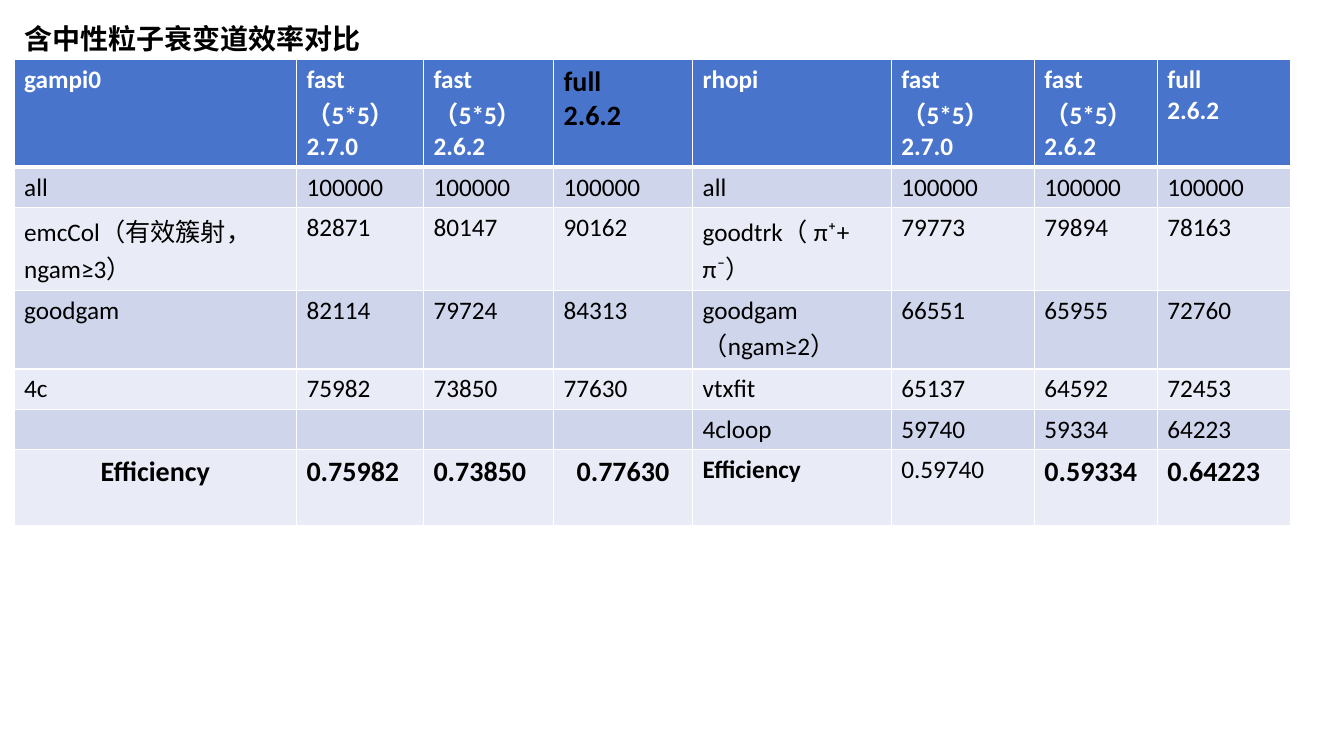
import pptx
import pptx.dml.color
import pptx.enum.text
import pptx.oxml
import pptx.oxml.ns
import pptx.util

Inches = pptx.util.Inches
RGBColor = pptx.dml.color.RGBColor
PP_ALIGN = pptx.enum.text.PP_ALIGN

WHITE = RGBColor(0xFF, 0xFF, 0xFF)
BLACK = RGBColor(0x00, 0x00, 0x00)
HEADER_BLUE = RGBColor(0x48, 0x74, 0xCB)
BAND_DARK = RGBColor(0xCF, 0xD6, 0xEC)
BAND_LIGHT = RGBColor(0xE9, 0xEB, 0xF6)

TITLE = "含中性粒子衰变道效率对比"
COL_WIDTHS = [2.8, 1.26, 1.29, 1.38, 1.97, 1.42, 1.22, 1.32]
ROW_HEIGHTS = [1.07, 0.4, 0.82, 0.78, 0.4, 0.4, 0.75]
FAST_270 = "fast（5*5）\n2.7.0"
FAST_262 = "fast（5*5）\n2.6.2"
FULL_262 = "full\n2.6.2"
ROWS = [
    ["gampi0", FAST_270, FAST_262, FULL_262, "rhopi", FAST_270, FAST_262, FULL_262],
    ["all", "100000", "100000", "100000", "all", "100000", "100000", "100000"],
    ["emcCol（有效簇射，ngam≥3）", "82871", "80147", "90162",
     "goodtrk（ π⁺+ π⁻）", "79773", "79894", "78163"],
    ["goodgam", "82114", "79724", "84313", "goodgam（ngam≥2）", "66551", "65955", "72760"],
    ["4c", "75982", "73850", "77630", "vtxfit", "65137", "64592", "72453"],
    ["", "", "", "", "4cloop", "59740", "59334", "64223"],
    ["Efficiency", "0.75982", "0.73850", "0.77630",
     "Efficiency", "0.59740", "0.59334", "0.64223"],
]
HEADER = {"size": 18, "bold": True, "color": WHITE}
BODY = {"size": 18, "bold": False, "color": BLACK}
RESULT = {"size": 20, "bold": True, "color": BLACK}
EXCEPTIONS = {
    (0, 3): {"size": 20, "color": BLACK},
    (6, 0): {"align": PP_ALIGN.CENTER},
    (6, 3): {"align": PP_ALIGN.CENTER},
    (6, 4): {"size": 18},
    (6, 5): {"size": 18, "bold": False},
}


def set_text(tf, text, fmt):
    """Fill a text frame, one paragraph a line, in the given format."""
    tf.text = text
    for p in tf.paragraphs:
        p.alignment = fmt.get("align", PP_ALIGN.LEFT)
        for r in p.runs:
            font = {"name": "Calibri", "size": pptx.util.Pt(fmt["size"]), "bold": fmt["bold"]}
            for name, value in font.items():
                setattr(r.font, name, value)
            r.font.color.rgb = fmt["color"]


def set_borders(cell, bottom):
    """Draw white cell borders with the given bottom width in points."""
    tcPr = cell._tc.get_or_add_tcPr()
    for side, width in {"L": 1, "R": 1, "T": 1, "B": bottom}.items():
        tcPr.append(pptx.oxml.parse_xml(
            f'<a:ln{side} {pptx.oxml.ns.nsdecls("a")} w="{pptx.util.Pt(width)}">'
            f'<a:solidFill><a:srgbClr val="{WHITE}"/></a:solidFill></a:ln{side}>'))


def add_title(s, left, top, width, height):
    """Place the slide title in the given box."""
    sp = s.shapes.title
    box = {"left": left, "top": top, "width": width, "height": height}
    for name, value in box.items():
        setattr(sp, name, Inches(value))
    set_text(sp.text_frame, TITLE, RESULT)
    sp.text_frame.auto_size = pptx.enum.text.MSO_AUTO_SIZE.SHAPE_TO_FIT_TEXT


def add_efficiency_table(s, left, top, width, height):
    """Place the table of event counts and efficiencies in the given box."""
    table = s.shapes.add_table(len(ROWS), len(COL_WIDTHS), Inches(left), Inches(top),
                               Inches(width), Inches(height)).table
    table.horz_banding = False
    for col, col_width in zip(table.columns, COL_WIDTHS):
        col.width = Inches(col_width)
    for i, values in enumerate(ROWS):
        table.rows[i].height = Inches(ROW_HEIGHTS[i])
        base = {0: HEADER, len(ROWS) - 1: RESULT}.get(i, BODY)
        fill = HEADER_BLUE if i == 0 else BAND_DARK if i % 2 else BAND_LIGHT
        for j, text in enumerate(values):
            cell = table.cell(i, j)
            set_borders(cell, 3 if i == 0 else 1)
            cell.fill.solid()
            cell.fill.fore_color.rgb = fill
            set_text(cell.text_frame, text, {**base, **EXCEPTIONS.get((i, j), {})})


def main():
    """Build the slide and save it."""
    prs = pptx.Presentation()
    prs.slide_width, prs.slide_height = Inches(13.33), Inches(7.5)
    s = prs.slides.add_slide(prs.slide_layouts[5])
    add_efficiency_table(s, 0.14, 0.59, sum(COL_WIDTHS), sum(ROW_HEIGHTS))
    add_title(s, 0.14, 0.16, 6.67, 0.44)
    prs.save("out.pptx")


if __name__ == "__main__":
    main()
